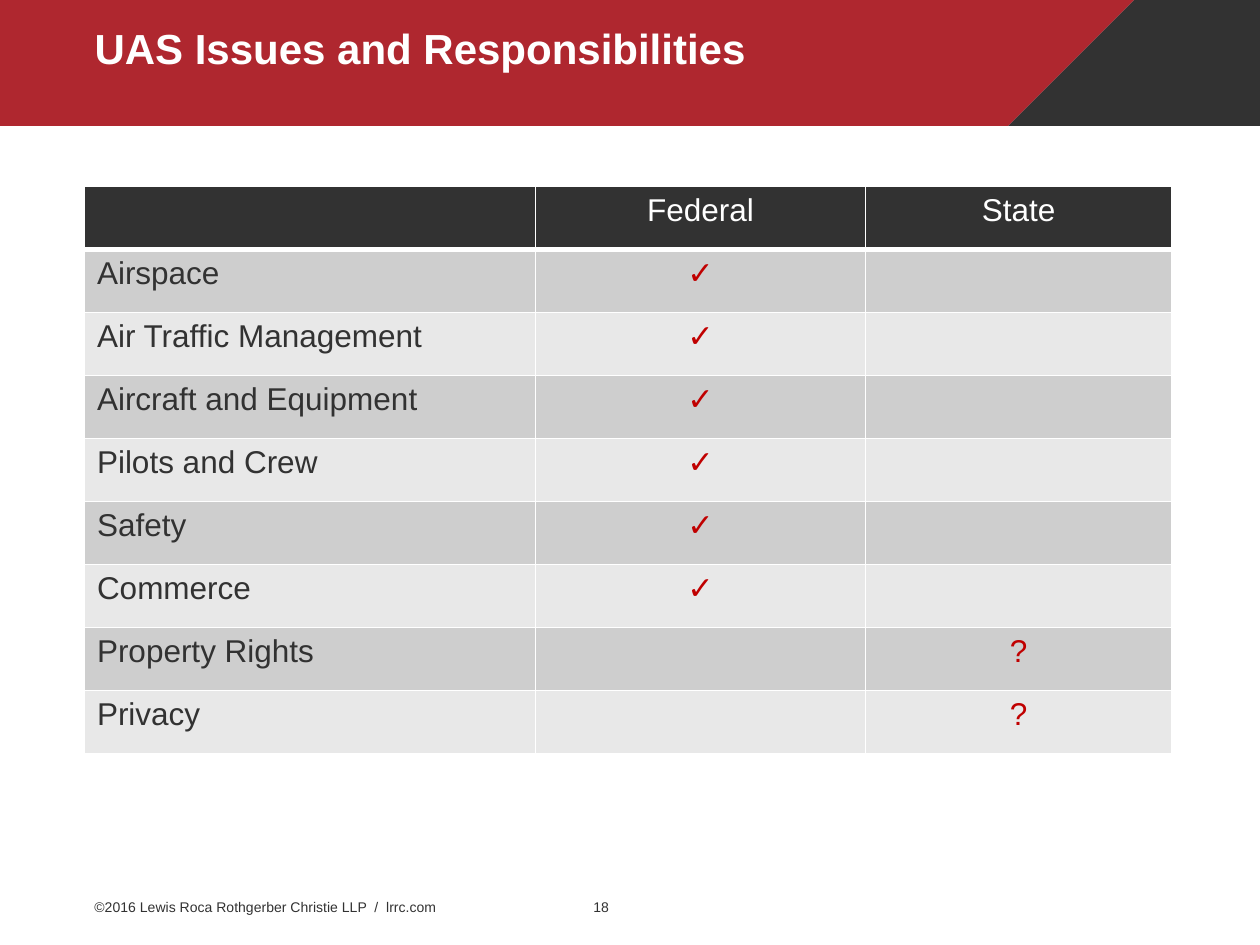
from lxml import etree
from pptx import Presentation
from pptx import util as u
from pptx.dml.color import RGBColor
from pptx.enum import text
from pptx.oxml import ns

COLORS = {"dark": "323232", "red": "AF272F", "mark": "C00000", "white": "FFFFFF",
          "odd": "CECECE", "even": "E8E8E8"}
TITLE = "UAS Issues and Responsibilities"
HEADER = ("", "Federal", "State")
ISSUES = [
    ("Airspace", "✓", ""),
    ("Air Traffic Management", "✓", ""),
    ("Aircraft and Equipment", "✓", ""),
    ("Pilots and Crew", "✓", ""),
    ("Safety", "✓", ""),
    ("Commerce", "✓", ""),
    ("Property Rights", "", "?"),
    ("Privacy", "", "?"),
]
COLUMNS = (3.58, 2.62, 2.43)
ROW_HEIGHT = 0.5
TABLE_LEFT, TABLE_TOP = 0.67, 1.48
BAND_HEIGHT = 0.82
BANDS = [
    ("dark", [(8.94, 0), (10, 0), (10, BAND_HEIGHT), (8.5, BAND_HEIGHT)]),
    ("red", [(0, 0), (8.84, 0), (8.4, BAND_HEIGHT), (0, BAND_HEIGHT)]),
]
FOOTERS = [
    ("©2016 Lewis Roca Rothgerber Christie LLP  /  lrrc.com", 0.75, 4),
    ("18", 4.71, 0.35),
]
FOOTER_TOP, FOOTER_HEIGHT = 7.08, 0.24


def rgb(name):
    return RGBColor.from_string(COLORS[name])


def write(tf, words, size, color, align=text.PP_ALIGN.LEFT, bold=False):
    p = tf.paragraphs[0]
    p.alignment = align
    font = p.font
    if words:
        r = p.add_run()
        r.text = words
        font = r.font
    for key, value in {"name": "Arial", "size": u.Pt(size), "bold": bold}.items():
        setattr(font, key, value)
    font.color.rgb = rgb(color)
    return p


def frame(tf, **formats):
    for key, value in formats.items():
        setattr(tf, key, value)


def place(s, left, top, width, height):
    s.left, s.top, s.width, s.height = map(u.Inches, (left, top, width, height))


def add_border(cell, bottom):
    props = cell._tc.get_or_add_tcPr()
    for side, width in {"L": 1, "R": 1, "T": 1, "B": bottom}.items():
        line = etree.SubElement(props, ns.qn(f"a:ln{side}"), w=str(u.Pt(width)))
        fill = etree.SubElement(line, ns.qn("a:solidFill"))
        etree.SubElement(fill, ns.qn("a:srgbClr"), val=COLORS["white"])


def add_bands(slide):
    for color, points in BANDS:
        builder = slide.shapes.build_freeform(*points[0], scale=u.Inches(1))
        builder.add_line_segments(points[1:], close=True)
        s = builder.convert_to_shape()
        s.shadow.inherit = False
        s.fill.solid()
        s.fill.fore_color.rgb = rgb(color)
        s.line.fill.background()
        slide.shapes._spTree.remove(s._element)
        slide.shapes._spTree.insert(2 + BANDS.index((color, points)), s._element)


def add_title(slide):
    s = slide.shapes.title
    place(s, 0.75, 0, 7.9, 0.8)
    frame(s.text_frame, margin_left=0, margin_top=0, margin_right=u.Inches(0.1),
          margin_bottom=0, vertical_anchor=text.MSO_ANCHOR.MIDDLE, word_wrap=True)
    write(s.text_frame, TITLE, 24, "white", bold=True).line_spacing = 0.9


def add_issues(slide):
    rows = [HEADER] + ISSUES
    table = slide.shapes.add_table(
        len(rows), len(COLUMNS), u.Inches(TABLE_LEFT), u.Inches(TABLE_TOP),
        u.Inches(sum(COLUMNS)), u.Inches(ROW_HEIGHT * len(rows))).table
    for column, width in zip(table.columns, COLUMNS):
        column.width = u.Inches(width)
    for i, row in enumerate(rows):
        table.rows[i].height = u.Inches(ROW_HEIGHT)
        band = "dark" if i == 0 else "odd" if i % 2 else "even"
        for j, words in enumerate(row):
            cell = table.cell(i, j)
            color = "white" if i == 0 else "mark" if j else "dark"
            align = text.PP_ALIGN.CENTER if j else text.PP_ALIGN.LEFT
            add_border(cell, 1 if i else 3)
            cell.fill.solid()
            cell.fill.fore_color.rgb = rgb(band)
            write(cell.text_frame, words, 18, color, align)


def add_footers(slide):
    for words, left, width in FOOTERS:
        s = slide.shapes.add_textbox(0, 0, 0, 0)
        place(s, left, FOOTER_TOP, width, FOOTER_HEIGHT)
        frame(s.text_frame, margin_left=0, margin_top=0, margin_right=0,
              margin_bottom=0, vertical_anchor=text.MSO_ANCHOR.MIDDLE, word_wrap=True)
        write(s.text_frame, words, 8, "dark")


def main():
    prs = Presentation()
    prs.slide_width, prs.slide_height = u.Inches(10), u.Inches(7.5)
    slide = prs.slides.add_slide(prs.slide_layouts[5])
    add_bands(slide)
    add_title(slide)
    add_issues(slide)
    add_footers(slide)
    prs.save("out.pptx")


if __name__ == "__main__":
    main()
